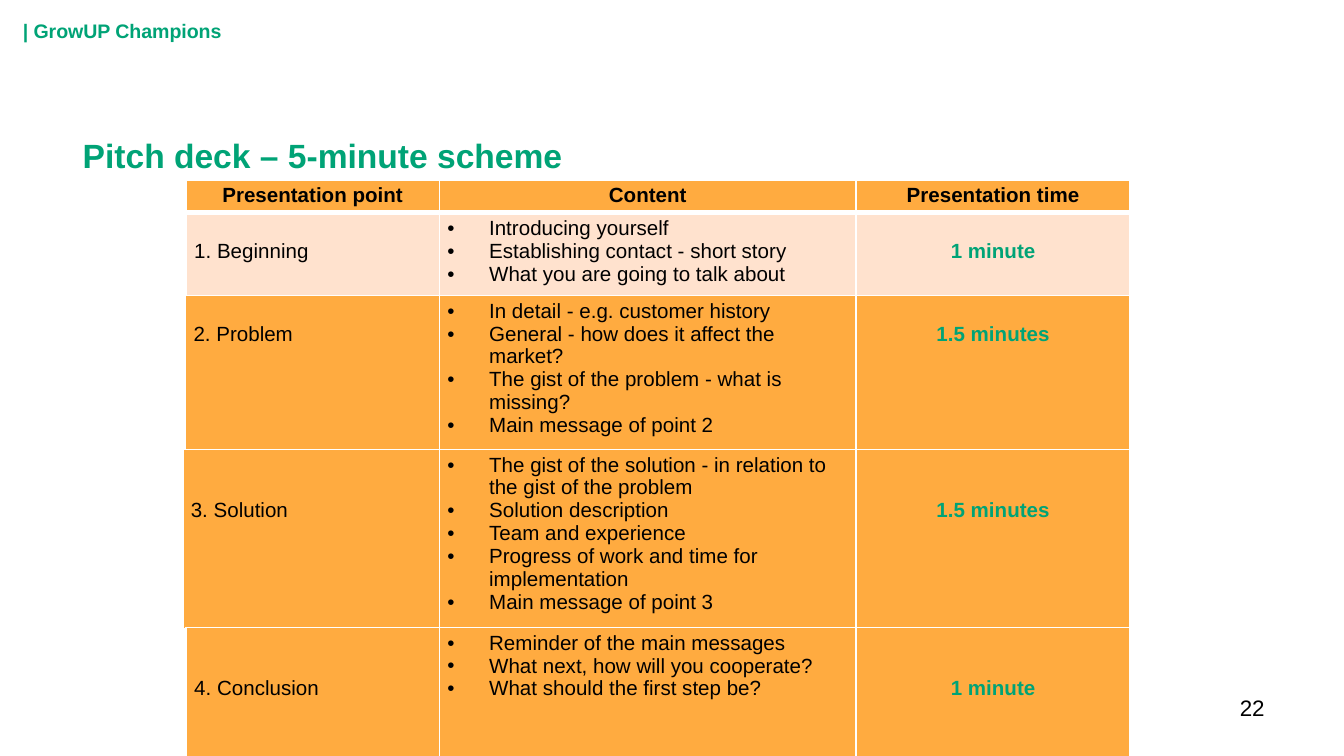
from dataclasses import dataclass

from lxml.etree import SubElement
from pptx import Presentation
from pptx.dml.color import RGBColor
from pptx.enum.text import MSO_ANCHOR, PP_ALIGN
from pptx.oxml.ns import qn
from pptx.util import Inches, Pt


@dataclass(frozen=True)
class Theme:
    font: str = "Arial"
    ink: str = "000000"
    green: str = "00A376"
    amber: str = "FFAB40"
    peach: str = "FFE2CE"
    white: str = "FFFFFF"
    title: float = 18
    brand: float = 10.5
    page: float = 12
    body: float = 11
    thin: float = 1
    thick: float = 3
    line: float = 1.7


class Deck:
    def __init__(self, theme, width):
        self.theme = theme
        self.show = Presentation()
        self.show.slide_width = Inches(width)
        self.show.slide_height = Inches(width * 9 / 16)
        self.unit = self.show.slide_width / 100
        self.slide = self.show.slides.add_slide(self.show.slide_layouts[6])

    def span(self, *cells):
        return [round(cell * self.unit) for cell in cells]

    def run(self, para, text, size, color, bold=False):
        run = para.add_run()
        run.text = text
        font = run.font
        font.name, font.size, font.bold = self.theme.font, Pt(size), bold
        font.color.rgb = RGBColor.from_string(color)

    def hang(self, para, left):
        props = para._p.get_or_add_pPr()
        props.set("marL", str(Inches(left)))
        props.set("indent", str(-Inches(left)))
        return props

    def text(self, box, text, size, color, bold=False, align=PP_ALIGN.LEFT,
             anchor=MSO_ANCHOR.TOP, space=None, hang=0):
        frame = self.slide.shapes.add_textbox(*self.span(*box)).text_frame
        frame.word_wrap = True
        frame.vertical_anchor = anchor
        frame.margin_left = frame.margin_right = Inches(0.09)
        frame.margin_top = frame.margin_bottom = Inches(0.04)
        para = frame.paragraphs[0]
        para.alignment = align
        if space:
            para.line_spacing = space
        if hang:
            self.hang(para, hang)
        self.run(para, text, size, color, bold)

    def edge(self, cell, top, bottom):
        props = cell._tc.get_or_add_tcPr()
        thin = self.theme.thin
        for side, width in zip("LRTB", (thin, thin, top, bottom)):
            line = SubElement(props, qn(f"a:ln{side}"), w=str(Pt(width)))
            fill = SubElement(line, qn("a:solidFill"))
            SubElement(fill, qn("a:srgbClr"), val=self.theme.white)

    def cell(self, cell, lines, fill, color, bold=False, align=PP_ALIGN.LEFT,
             drop=0, bullet=False, top=1, bottom=3):
        self.edge(cell, top, bottom)
        cell.fill.solid()
        cell.fill.fore_color.rgb = RGBColor.from_string(fill)
        cell.margin_left = cell.margin_right = Inches(0.06)
        cell.margin_bottom = Inches(0.03)
        cell.margin_top = self.span(0.3 + drop * self.theme.line)[0]
        frame = cell.text_frame
        for i, line in enumerate(lines):
            para = frame.add_paragraph() if i else frame.paragraphs[0]
            para.alignment = align
            if bullet:
                props = self.hang(para, 0.31)
                SubElement(props, qn("a:buFont"), typeface=self.theme.font)
                SubElement(props, qn("a:buChar"), char="•")
            self.run(para, line, self.theme.body, color, bold)

    def table(self, left, top, rows):
        widths = self.span(32.7 - left, 31, 20.4)
        heights = self.span(*rows)
        frame = self.slide.shapes.add_table(
            len(rows), len(widths), *self.span(left, top),
            sum(widths), sum(heights))
        table = frame.table
        table.first_row = table.horz_banding = False
        for col, width in zip(table.columns, widths):
            col.width = width
        for row, height in zip(table.rows, heights):
            row.height = height
        return table

    def head(self, table, names):
        look = self.theme
        for cell, name in zip(table.rows[0].cells, names):
            self.cell(cell, [name], look.amber, look.ink, True, PP_ALIGN.CENTER)

    def stage(self, row, point, items, time, drop, fill, **edges):
        look = self.theme
        first, mid, last = row.cells
        self.cell(first, [point], fill, look.ink, drop=drop, **edges)
        self.cell(mid, items, fill, look.ink, bullet=True, **edges)
        self.cell(last, [time], fill, look.green, True, PP_ALIGN.CENTER,
                  drop, **edges)

    def save(self):
        self.show.save("out.pptx")


HEADS = ["Presentation point", "Content", "Presentation time"]
START = ["Introducing yourself", "Establishing contact - short story",
         "What you are going to talk about"]
STAGES = [
    (13.8, 22, 11.6, 1, "2. Problem", "1.5 minutes", [
        "In detail - e.g. customer history",
        "General - how does it affect the market?",
        "The gist of the problem - what is missing?",
        "Main message of point 2"]),
    (13.6, 33.45, 13.4, 2, "3. Solution", "1.5 minutes", [
        "The gist of the solution - in relation to the gist of the problem",
        "Solution description",
        "Team and experience",
        "Progress of work and time for implementation",
        "Main message of point 3"]),
    (13.85, 46.7, 9.9, 2, "4. Conclusion", "1 minute", [
        "Reminder of the main messages",
        "What next, how will you cooperate?",
        "What should the first step be?"]),
]


def main():
    look = Theme()
    deck = Deck(look, 10)
    deck.text((5.25, 6.65, 89.5, 10.6), "Pitch deck – 5-minute scheme",
              look.title, look.green, True, space=2.0, hang=0.6)
    table = deck.table(13.85, 13.4, [2.4, 6.2])
    deck.head(table, HEADS)
    deck.stage(table.rows[1], "1. Beginning", START, "1 minute", 1,
               look.peach, top=look.thick, bottom=look.thin)
    for left, top, height, drop, point, time, items in STAGES:
        table = deck.table(left, top, [height])
        deck.stage(table.rows[0], point, items, time, drop, look.amber,
                   top=look.thin, bottom=look.thick)
    deck.text((71.7, 51.25, 23.3, 3.9), "22", look.page, look.ink,
              align=PP_ALIGN.RIGHT)
    deck.text((0.8, 0.65, 75.6, 3.3), "| GrowUP Champions", look.brand,
              look.green, True, anchor=MSO_ANCHOR.MIDDLE)
    deck.save()


if __name__ == "__main__":
    main()
